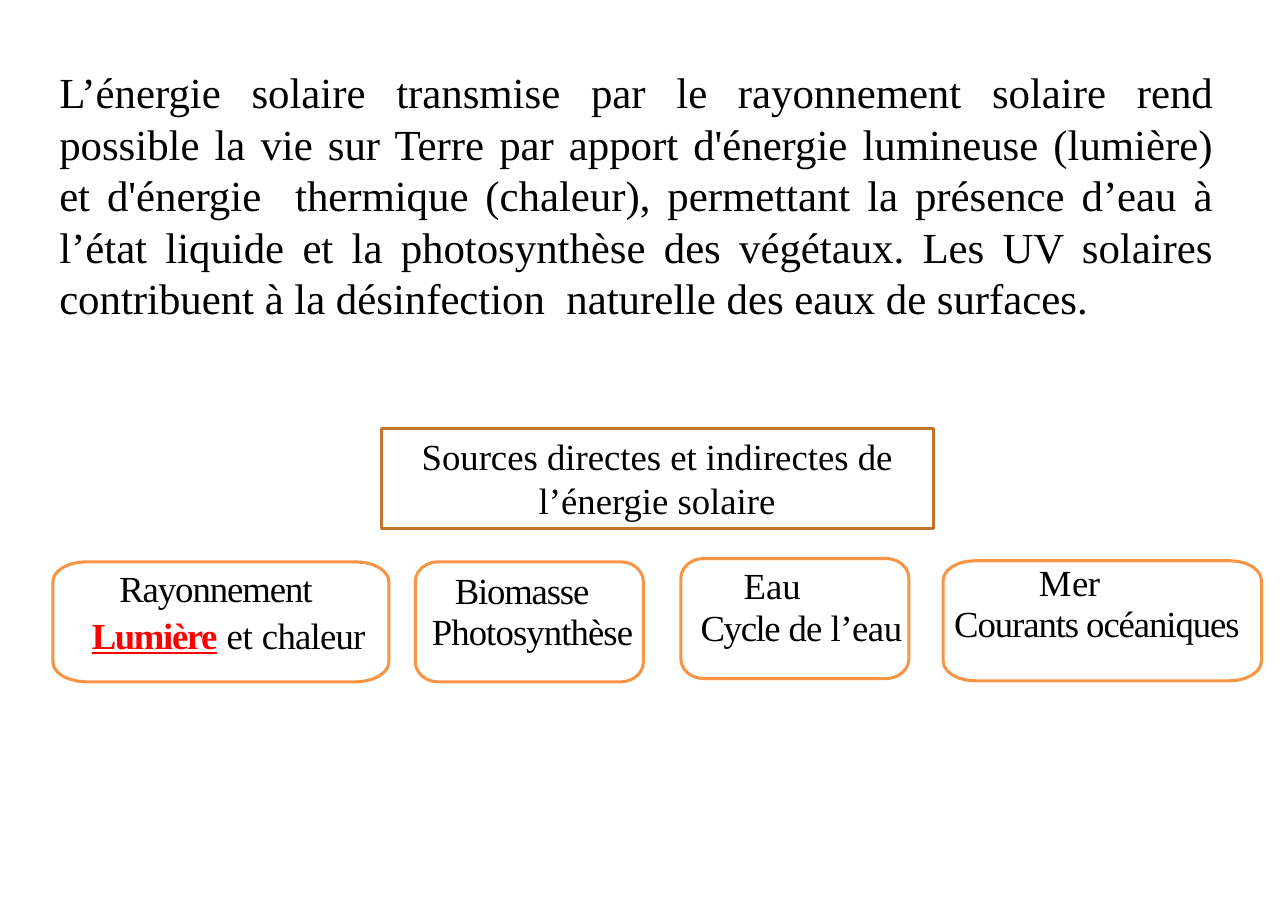
from math import cos, pi, sin

from pptx import Presentation
from pptx.dml.color import RGBColor
from pptx.enum.shapes import MSO_SHAPE
from pptx.enum.text import MSO_ANCHOR, PP_ALIGN
from pptx.util import Inches, Pt

THEME = {
    "font": "Times New Roman",
    "text": "000000",
    "accent": "FF0000",
    "title_line": "C17529",
    "card_line": "F79546",
    "body_size": 28,
    "label_size": 24,
    "line_width": 2,
}

INTRO = (
    "L’énergie solaire transmise par le rayonnement solaire rend possible la vie "
    "sur Terre par apport d'énergie lumineuse (lumière) et d'énergie  thermique "
    "(chaleur), permettant la présence d’eau à l’état liquide et la photosynthèse "
    "des végétaux. Les UV solaires contribuent à la désinfection  naturelle des "
    "eaux de surfaces."
)
INTRO_BOX = (0.44, 0.55, 10.67, 2.46)
TITLE = "Sources directes et indirectes de l’énergie solaire"
TITLE_BOX = (3.46, 3.89, 5.01, 0.91)

CARD_HEIGHT = 1.09
CORNER_WIDTH, CORNER_HEIGHT = 0.1, 0.18  # share of the card width, inches
CORNER_STEPS = 6

# Card: left, top, width, labels. Label: box, alignment, runs of (text, format).
RED = {"color": THEME["accent"], "bold": True, "spacing": -0.9}
LEFT, CENTER = PP_ALIGN.LEFT, PP_ALIGN.CENTER
CARDS = [
    (0.48, 5.1, 3.05, [
        ((0.77, 5.13, 2.37, 0.42), CENTER, [("Rayonnement", {"spacing": -0.7})]),
        ((0.58, 5.55, 2.98, 0.42), CENTER, [
            ("Lumière", {**RED, "underline": True}), (" ", RED),
            ("et ", {"spacing": -0.1}), ("chaleur", {"spacing": -0.5})]),
    ]),
    (3.77, 5.1, 2.07, [
        ((4.12, 5.14, 1.36, 0.82), LEFT, [("Biomasse", {"spacing": -0.8})]),
        ((3.91, 5.52, 1.96, 0.82), LEFT, [("Photosynthèse", {"spacing": -0.6})]),
    ]),
    (6.18, 5.07, 2.07, [
        ((6.74, 5.1, 0.81, 0.42), LEFT, [
            ("E", {"spacing": -1.8}), ("a", {"spacing": -1.4}),
            ("u", {"spacing": -0.4})]),
        ((6.35, 5.48, 1.97, 0.82), LEFT, [
            ("Cycle ", {"spacing": -0.9}), ("de ", {"spacing": -0.6}),
            ("l’eau", {"spacing": -0.3})]),
    ]),
    (8.56, 5.09, 2.89, [
        ((9.42, 5.07, 0.69, 0.42), LEFT, [
            ("M", {"spacing": 0.3}), ("er", {"spacing": -0.3})]),
        ((8.65, 5.44, 2.69, 0.82), LEFT, [
            ("Courants océaniques", {"spacing": -0.7})]),
    ]),
]


def inches(box):
    return [Inches(v) for v in box]


def add_run(p, text, size=THEME["label_size"], color=THEME["text"],
            bold=False, underline=False, spacing=0):
    r = p.add_run()
    r.text = text
    r.font.name = THEME["font"]
    r.font.size = Pt(size)
    r.font.bold = bold
    r.font.underline = underline
    r.font.color.rgb = RGBColor.from_string(color)
    if spacing:
        r.font._element.set("spc", str(round(spacing * 100)))


def add_label(s, box, align, runs):
    tf = s.shapes.add_textbox(*inches(box)).text_frame
    tf.word_wrap = True
    tf.margin_left = tf.margin_top = Inches(0.01)
    tf.margin_right = tf.margin_bottom = 0
    p = tf.paragraphs[0]
    p.alignment = align
    p.space_before = Pt(1)
    for text, style in runs:
        add_run(p, text, **style)


def outline(sp, color):
    sp.shadow.inherit = False
    sp.fill.background()
    sp.line.color.rgb = RGBColor.from_string(color)
    sp.line.width = Pt(THEME["line_width"])


def add_card(s, left, top, width):
    """Draw a card whose elliptical corners widen with the card."""
    rx, ry = CORNER_WIDTH * width, CORNER_HEIGHT
    x0, x1 = left + rx, left + width - rx
    y0, y1 = top + ry, top + CARD_HEIGHT - ry
    points = []
    for i, (cx, cy) in enumerate([(x0, y0), (x1, y0), (x1, y1), (x0, y1)]):
        for step in range(CORNER_STEPS + 1):
            angle = pi + (i + step / CORNER_STEPS) * pi / 2
            points.append((Inches(cx + rx * cos(angle)),
                           Inches(cy + ry * sin(angle))))
    builder = s.shapes.build_freeform(*points[0])
    builder.add_line_segments(points[1:], close=True)
    outline(builder.convert_to_shape(), THEME["card_line"])


def main():
    prs = Presentation()
    prs.slide_width, prs.slide_height = Inches(11.69), Inches(8.27)
    s = prs.slides.add_slide(prs.slide_layouts[6])

    tf = s.shapes.add_textbox(*inches(INTRO_BOX)).text_frame
    tf.word_wrap = True
    tf.paragraphs[0].alignment = PP_ALIGN.JUSTIFY
    add_run(tf.paragraphs[0], INTRO, size=THEME["body_size"])

    for left, top, width, labels in CARDS:
        add_card(s, left, top, width)
        for label in labels:
            add_label(s, *label)

    sp = s.shapes.add_shape(MSO_SHAPE.RECTANGLE, *inches(TITLE_BOX))
    outline(sp, THEME["title_line"])
    tf = sp.text_frame
    tf.word_wrap = True
    tf.vertical_anchor = MSO_ANCHOR.TOP
    tf.paragraphs[0].alignment = CENTER
    add_run(tf.paragraphs[0], TITLE)

    prs.save("out.pptx")


if __name__ == "__main__":
    main()
